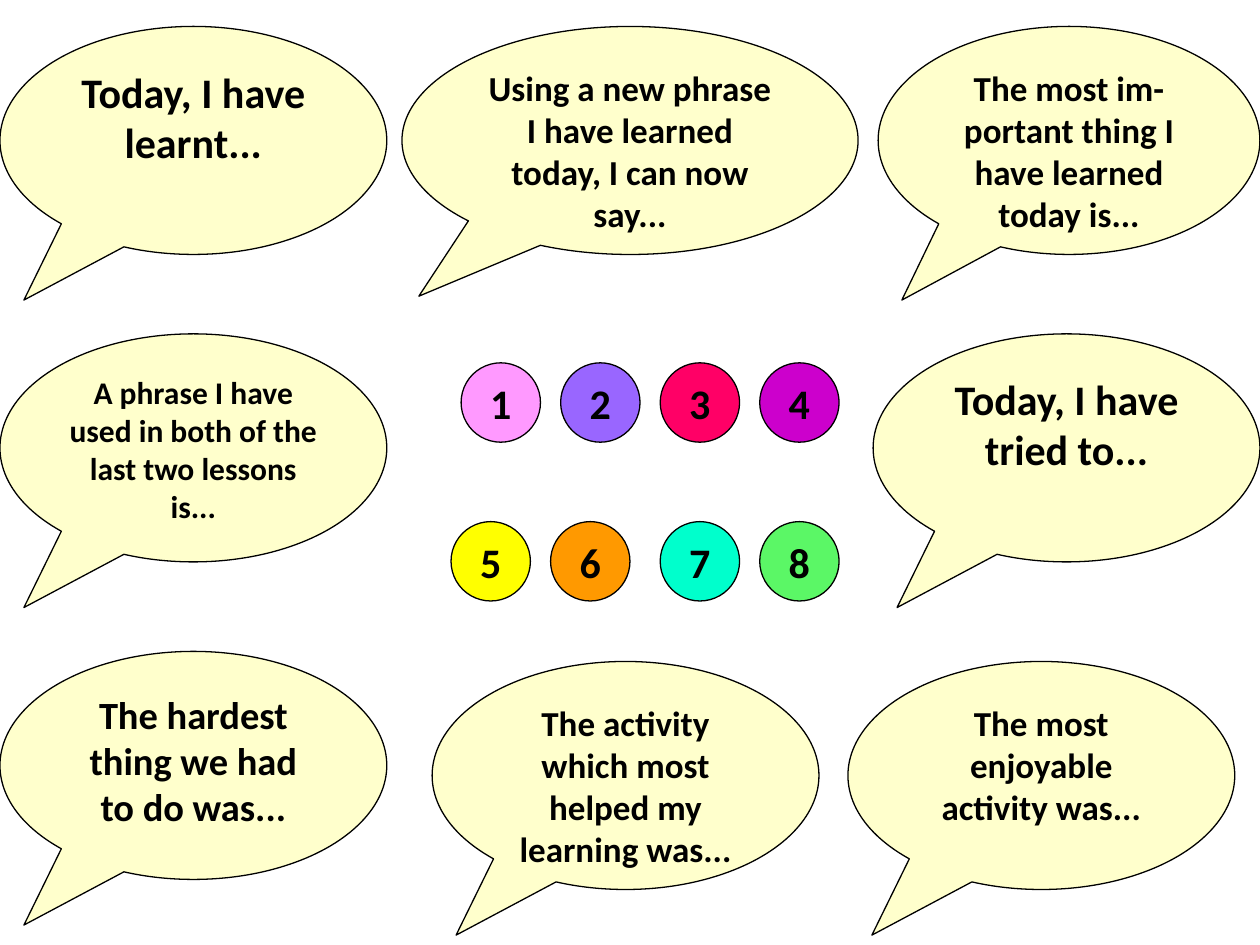
"""Build a lesson review slide of speech bubbles around numbered circles."""
from pptx import Presentation
from pptx.dml.color import RGBColor
from pptx.enum.shapes import MSO_SHAPE as Shape
from pptx.enum.text import MSO_ANCHOR as Anchor, PP_ALIGN as Align
from pptx.util import Inches, Pt

COLORS = {"bubble": "FFFFCC", "ink": "000000"}
BUBBLE_W, BUBBLE_H = 3.07, 1.81
TAIL = (-0.438, 0.7)
CIRCLE, PITCH = 0.63, 0.79

BUBBLES = [
    ("Today, I have learnt...", 24, 0, 0.21, BUBBLE_W, TAIL),
    ("Using a new phrase I have learned today, I can now say...", 20, 3.19, 0.21, 3.62, (-0.463, 0.683)),
    ("The most im-portant thing I have learned today is...", 20, 6.97, 0.21, 3.03, TAIL),
    ("A phrase I have used in both of the last two lessons is...", 18, 0, 2.65, BUBBLE_W, TAIL),
    ("Today, I have tried to...", 24, 6.93, 2.65, BUBBLE_W, TAIL),
    ("The hardest thing we had to do was...", 22, 0, 5.17, BUBBLE_W, TAIL),
    ("The activity which most helped my learning was...", 20, 3.43, 5.25, BUBBLE_W, TAIL),
    ("The most enjoyable activity was...", 20, 6.73, 5.25, BUBBLE_W, TAIL),
]
CIRCLE_PAIRS = [
    (3.66, 2.88, ("FF99FF", "9966FF")),
    (5.24, 2.88, ("FF0066", "CC00CC")),
    (3.58, 4.14, ("FFFF00", "FF9900")),
    (5.24, 4.14, ("00FFCC", "5BF766")),
]


def rgb(value):
    return RGBColor.from_string(value)


def add_label(s, kind, box, fill, text, size, **frame):
    sp = s.shapes.add_shape(kind, *map(Inches, box))
    sp.shadow.inherit = False
    sp.fill.solid()
    sp.fill.fore_color.rgb = rgb(fill)
    sp.line.color.rgb = rgb(COLORS["ink"])
    sp.line.width = Pt(0.75)
    tf = sp.text_frame
    for name, value in frame.items():
        setattr(tf, name, value)
    p = tf.paragraphs[0]
    p.alignment = Align.CENTER
    r = p.add_run()
    r.text = text
    for name, value in {"name": "Calibri", "size": Pt(size), "bold": True}.items():
        setattr(r.font, name, value)
    r.font.color.rgb = rgb(COLORS["ink"])
    return sp


def main():
    prs = Presentation()
    prs.slide_width, prs.slide_height = Inches(10), Inches(7.5)
    s = prs.slides.add_slide(prs.slide_layouts[6])
    for text, size, x, y, width, tail in BUBBLES:
        sp = add_label(s, Shape.OVAL_CALLOUT, (x, y, width, BUBBLE_H), COLORS["bubble"],
                       text, size, word_wrap=True, vertical_anchor=Anchor.TOP)
        for i, value in enumerate(tail):
            sp.adjustments[i] = value
    number = 0
    for left, y, fills in CIRCLE_PAIRS:
        for i, fill in enumerate(fills):
            number += 1
            add_label(s, Shape.OVAL, (left + i * PITCH, y, CIRCLE, CIRCLE), fill,
                      str(number), 24, word_wrap=False, vertical_anchor=Anchor.MIDDLE)
    prs.save("out.pptx")


if __name__ == "__main__":
    main()
